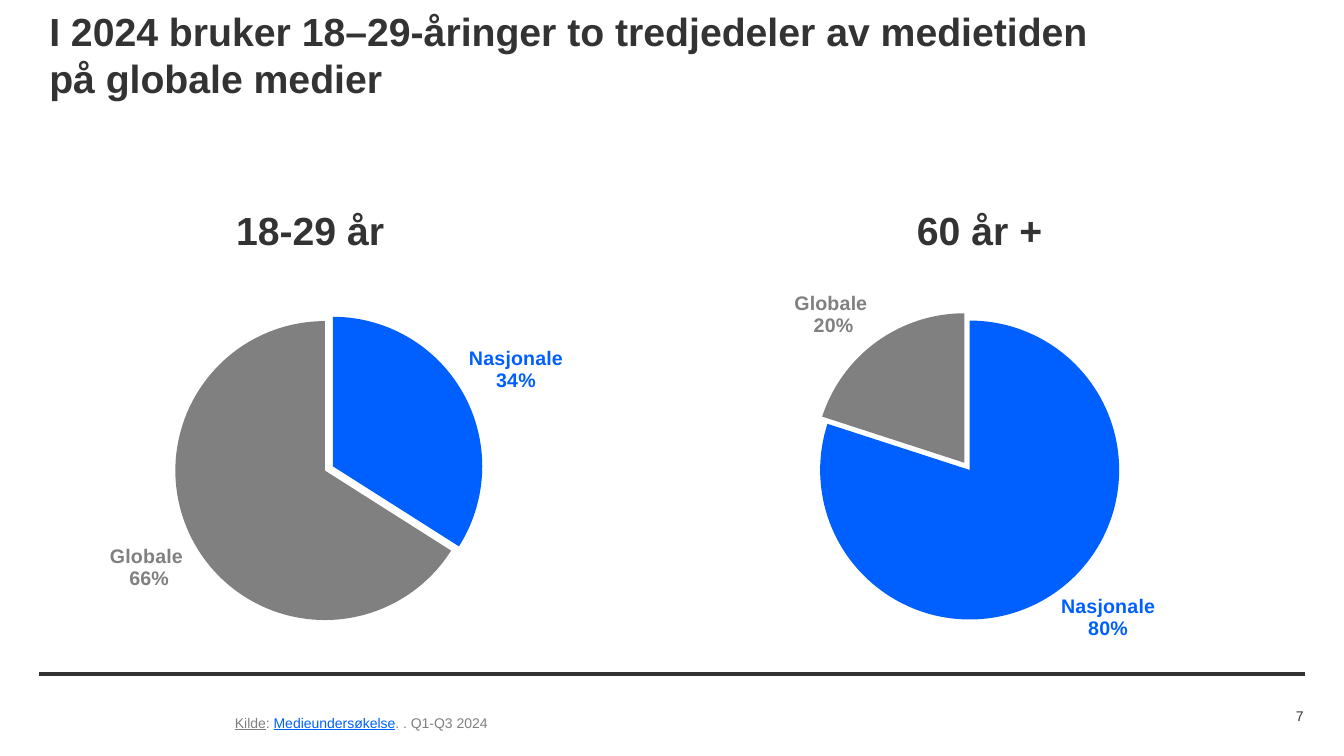
from lxml import etree
from pptx import Presentation
from pptx.chart.data import CategoryChartData
from pptx.dml.color import RGBColor
from pptx.enum.chart import XL_CHART_TYPE, XL_LABEL_POSITION
from pptx.enum.shapes import MSO_CONNECTOR
from pptx.enum.text import MSO_ANCHOR, PP_ALIGN
from pptx.oxml import parse_xml
from pptx.oxml.ns import nsdecls, qn
from pptx.util import Inches, Pt

PIE = XL_CHART_TYPE.PIE
OUTSIDE_END = XL_LABEL_POSITION.OUTSIDE_END
STRAIGHT = MSO_CONNECTOR.STRAIGHT
TOP, MIDDLE = MSO_ANCHOR.TOP, MSO_ANCHOR.MIDDLE
LEFT, CENTER, RIGHT = PP_ALIGN.LEFT, PP_ALIGN.CENTER, PP_ALIGN.RIGHT

FONT = "Arial"
DARK, GRAY, BLUE = "333333", "808080", "0060FF"
CATEGORIES = ["Nasjonale", "Globale "]
SLICE_COLORS = [BLUE, GRAY]
PLOT_AREA = {"x": 0.178, "y": 0.154, "w": 0.565, "h": 0.724}
EXPLOSION = 3


def rgb(color):
    return RGBColor.from_string(color)


def format_font(font, size, color, bold=False, underline=False):
    font.name = FONT
    font.size = Pt(size)
    font.bold = bold
    font.color.rgb = rgb(color)
    if underline:
        font.underline = True


def add_text(slide, text, left, top, width, height, size=28, color=DARK,
             bold=False, align=LEFT, anchor=TOP, inset=True):
    """Text is a string with line breaks, or a list of (text, color, underline)."""
    box = slide.shapes.add_textbox(Inches(left), Inches(top), Inches(width), Inches(height))
    frame = box.text_frame
    frame.word_wrap = True
    frame.vertical_anchor = anchor
    if not inset:
        frame.margin_left = frame.margin_right = Inches(0)
        frame.margin_top = frame.margin_bottom = Inches(0)
    if isinstance(text, str):
        lines = [[(line, color, False)] for line in text.split("\n")]
    else:
        lines = [text]
    for index, line in enumerate(lines):
        paragraph = frame.add_paragraph() if index else frame.paragraphs[0]
        paragraph.alignment = align
        for content, run_color, underline in line:
            run = paragraph.add_run()
            run.text = content
            format_font(run.font, size, run_color, bold, underline)


def add_rule(slide, left, right, top):
    rule = slide.shapes.add_connector(STRAIGHT, Inches(left), Inches(top),
                                      Inches(right), Inches(top))
    rule.line.color.rgb = rgb(DARK)
    rule.line.width = Pt(3)
    etree.SubElement(rule.element.spPr, qn("a:effectLst"))


def chart_element(tag, value):
    return parse_xml(f'<c:{tag} {nsdecls("c")} val="{value}"/>')


def set_plot_layout(chart):
    plot_area = chart.element.find(".//" + qn("c:plotArea"))
    for layout in plot_area.findall(qn("c:layout")):
        plot_area.remove(layout)
    sizes = "".join(f'<c:{name} val="{value}"/>' for name, value in PLOT_AREA.items())
    plot_area.insert(0, parse_xml(
        f'<c:layout {nsdecls("c")}><c:manualLayout><c:layoutTarget val="inner"/>'
        f'<c:xMode val="edge"/><c:yMode val="edge"/>{sizes}'
        '</c:manualLayout></c:layout>'))


def show_category_and_percent(series_element):
    shown = {"showVal": "0", "showCatName": "1", "showPercent": "1"}
    for tag, value in shown.items():
        for element in series_element.iter(qn("c:" + tag)):
            element.set("val", value)
    for element in list(series_element.iter(qn("c:showBubbleSize"))):
        separator = parse_xml(f'<c:separator {nsdecls("c")}>\n</c:separator>')
        element.addnext(separator)


def explode_slices(series_element):
    points = series_element.findall(qn("c:dPt"))
    points[0].addprevious(chart_element("explosion", EXPLOSION))
    for point in points:
        point.find(qn("c:spPr")).addprevious(chart_element("explosion", EXPLOSION))


def add_pie(slide, values, left, top):
    data = CategoryChartData(number_format="0")
    data.categories = CATEGORIES
    data.add_series("Series 1", values)
    chart = slide.shapes.add_chart(PIE, Inches(left), Inches(top),
                                   Inches(6.15), Inches(4.22), data).chart
    chart.has_title = False
    chart.has_legend = False
    format_font(chart.font, 10, DARK)
    chart.plots[0].vary_by_categories = True
    series = chart.plots[0].series[0]
    series.data_labels.position = OUTSIDE_END
    series.data_labels.number_format = "0%"
    series.data_labels.number_format_is_linked = False
    format_font(series.data_labels.font, 14, DARK, bold=True)
    for index, color in enumerate(SLICE_COLORS):
        point = series.points[index]
        point.format.fill.solid()
        point.format.fill.fore_color.rgb = rgb(color)
        format_font(point.data_label.font, 14, color, bold=True)
        point.data_label.position = OUTSIDE_END
    series_element = chart.element.find(".//" + qn("c:ser"))
    show_category_and_percent(series_element)
    explode_slices(series_element)
    set_plot_layout(chart)


def main():
    presentation = Presentation()
    presentation.slide_width = Inches(13.33)
    presentation.slide_height = Inches(7.5)
    slide = presentation.slides.add_slide(presentation.slide_layouts[6])

    # Title and bottom rule
    add_rule(slide, 0.39, 12.94, 6.69)
    add_text(slide, "I 2024 bruker 18–29-åringer to tredjedeler av medietiden\npå globale medier",
             0.39, 0.08, 13.02, 0.91, bold=True, anchor=MIDDLE)

    # Age group headings
    add_text(slide, "18-29 år", 0, 2, 6.15, 0.79, bold=True, align=CENTER)
    add_text(slide, "60 år +", 6.64, 2, 6.15, 0.79, bold=True, align=CENTER)

    # Source line and page number
    source = [("Kilde", GRAY, True), (": ", GRAY, False),
              ("Medieundersøkelse", BLUE, True), (". . Q1-Q3 2024", GRAY, False)]
    add_text(slide, source, 2.33, 7.02, 10.3, 0.3, size=10, anchor=MIDDLE, inset=False)
    add_text(slide, "7", 11.87, 7, 1.06, 0.2, size=10, align=RIGHT, anchor=MIDDLE, inset=False)

    # Media time per age group
    add_pie(slide, [34, 66], 0.43, 2.47)
    add_pie(slide, [80, 20], 6.76, 2.45)

    presentation.save("out.pptx")


if __name__ == "__main__":
    main()
